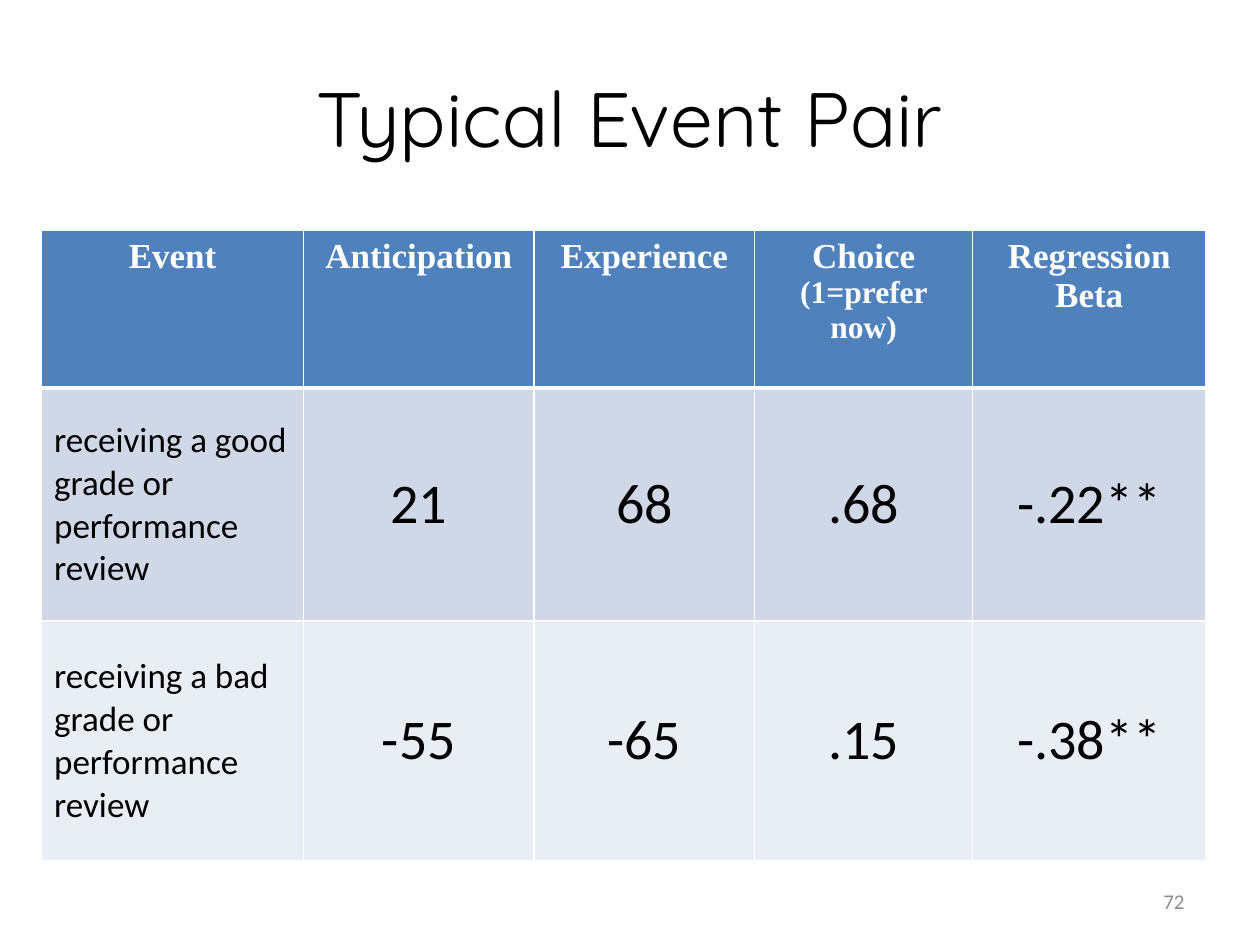
import lxml.etree
import pptx
import pptx.dml.color
import pptx.enum.text
import pptx.oxml.ns
import pptx.util

RGBColor = pptx.dml.color.RGBColor
ALIGN = pptx.enum.text.PP_ALIGN
ANCHOR = pptx.enum.text.MSO_ANCHOR

BLACK = RGBColor(0x00, 0x00, 0x00)
WHITE = RGBColor(0xFF, 0xFF, 0xFF)
GRAY = RGBColor(0x8C, 0x8C, 0x8C)
HEADER_BLUE = RGBColor(0x4F, 0x81, 0xBD)
BAND_COLORS = [RGBColor(0xD0, 0xD8, 0xE8), RGBColor(0xE9, 0xED, 0xF4)]

EMU_PER_PX = 9144  # 100 px to the inch

COLUMN_WIDTHS = [208, 183, 175, 173, 185]
ROW_HEIGHTS = [125, 185, 190]
HEADERS = ["Event", "Anticipation", "Experience", "Choice\n(1=prefer now)", "Regression Beta"]
EVENT_ROWS = [
    ["receiving a good grade or performance review", "21", "68", ".68", "-.22**"],
    ["receiving a bad grade or performance review", "-55", "-65", ".15", "-.38**"],
]


def px(length):
    return pptx.util.Emu(length * EMU_PER_PX)


class SlideBuilder:
    title_font = "Quicksand"
    header_font = "Times New Roman"
    body_font = "Calibri"

    def __init__(self, slide):
        self.slide = slide

    def format_text(self, text_frame, font, size, color, align, bold=False):
        for paragraph in text_frame.paragraphs:
            paragraph.alignment = align
            for run in paragraph.runs:
                run.font.name = font
                run.font.size = pptx.util.Pt(size)
                run.font.bold = bold
                run.font.color.rgb = color

    def title(self, text, left, top, width, height):
        shape = self.slide.shapes.title
        shape.left, shape.top, shape.width, shape.height = map(px, (left, top, width, height))
        shape.text_frame.text = text
        shape.text_frame.vertical_anchor = ANCHOR.MIDDLE
        self.format_text(shape.text_frame, self.title_font, 44, BLACK, ALIGN.CENTER)

    def page_number(self, text, left, top, width, height):
        shape = self.slide.shapes.add_textbox(*map(px, (left, top, width, height)))
        shape.text_frame.word_wrap = True
        shape.text_frame.vertical_anchor = ANCHOR.MIDDLE
        shape.text_frame.text = text
        self.format_text(shape.text_frame, self.body_font, 12, GRAY, ALIGN.RIGHT)

    def table(self, left, top, column_widths, row_heights):
        frame = self.slide.shapes.add_table(
            len(row_heights), len(column_widths), px(left), px(top),
            px(sum(column_widths)), px(sum(row_heights)))
        table = frame.table
        table.first_row = table.horz_banding = False
        for column, width in zip(table.columns, column_widths):
            column.width = px(width)
        for row, height in zip(table.rows, row_heights):
            row.height = px(height)
        return table

    def cell(self, cell, text, fill, anchor, top_border=1, bottom_border=1):
        cell.text_frame.text = text
        cell.vertical_anchor = anchor
        self.cell_borders(cell, {"lnL": 1, "lnR": 1, "lnT": top_border, "lnB": bottom_border})
        cell.fill.solid()
        cell.fill.fore_color.rgb = fill

    def cell_borders(self, cell, widths):
        """Draw white borders; widths maps line tags to points, in schema order."""
        qn = pptx.oxml.ns.qn
        properties = cell._tc.get_or_add_tcPr()
        for tag, width in widths.items():
            line = lxml.etree.SubElement(properties, qn(f"a:{tag}"), w=str(pptx.util.Pt(width)))
            solid = lxml.etree.SubElement(line, qn("a:solidFill"))
            lxml.etree.SubElement(solid, qn("a:srgbClr"), val=str(WHITE))

    def header_cell(self, cell, text):
        self.cell(cell, text, HEADER_BLUE, ANCHOR.TOP, bottom_border=3)
        self.format_text(cell.text_frame, self.header_font, 20, WHITE, ALIGN.CENTER, bold=True)
        for paragraph in cell.text_frame.paragraphs[1:]:
            paragraph.runs[0].font.size = pptx.util.Pt(18)

    def body_cell(self, cell, text, fill, is_event, top_border):
        self.cell(cell, text, fill, ANCHOR.MIDDLE, top_border=top_border)
        size, align = (20, ALIGN.LEFT) if is_event else (32, ALIGN.CENTER)
        self.format_text(cell.text_frame, self.body_font, size, BLACK, align)


def main():
    presentation = pptx.Presentation()
    presentation.slide_width, presentation.slide_height = px(1000), px(750)
    slide = presentation.slides.add_slide(presentation.slide_layouts[5])
    builder = SlideBuilder(slide)

    builder.title("Typical Event Pair", 50, 30, 900, 125)
    builder.page_number("72", 717, 695, 233, 40)

    table = builder.table(33, 183, COLUMN_WIDTHS, ROW_HEIGHTS)
    for column, text in enumerate(HEADERS):
        builder.header_cell(table.cell(0, column), text)
    for row, (values, fill) in enumerate(zip(EVENT_ROWS, BAND_COLORS), start=1):
        for column, text in enumerate(values):
            builder.body_cell(table.cell(row, column), text, fill,
                              is_event=column == 0, top_border=3 if row == 1 else 1)

    presentation.save("out.pptx")


if __name__ == "__main__":
    main()
